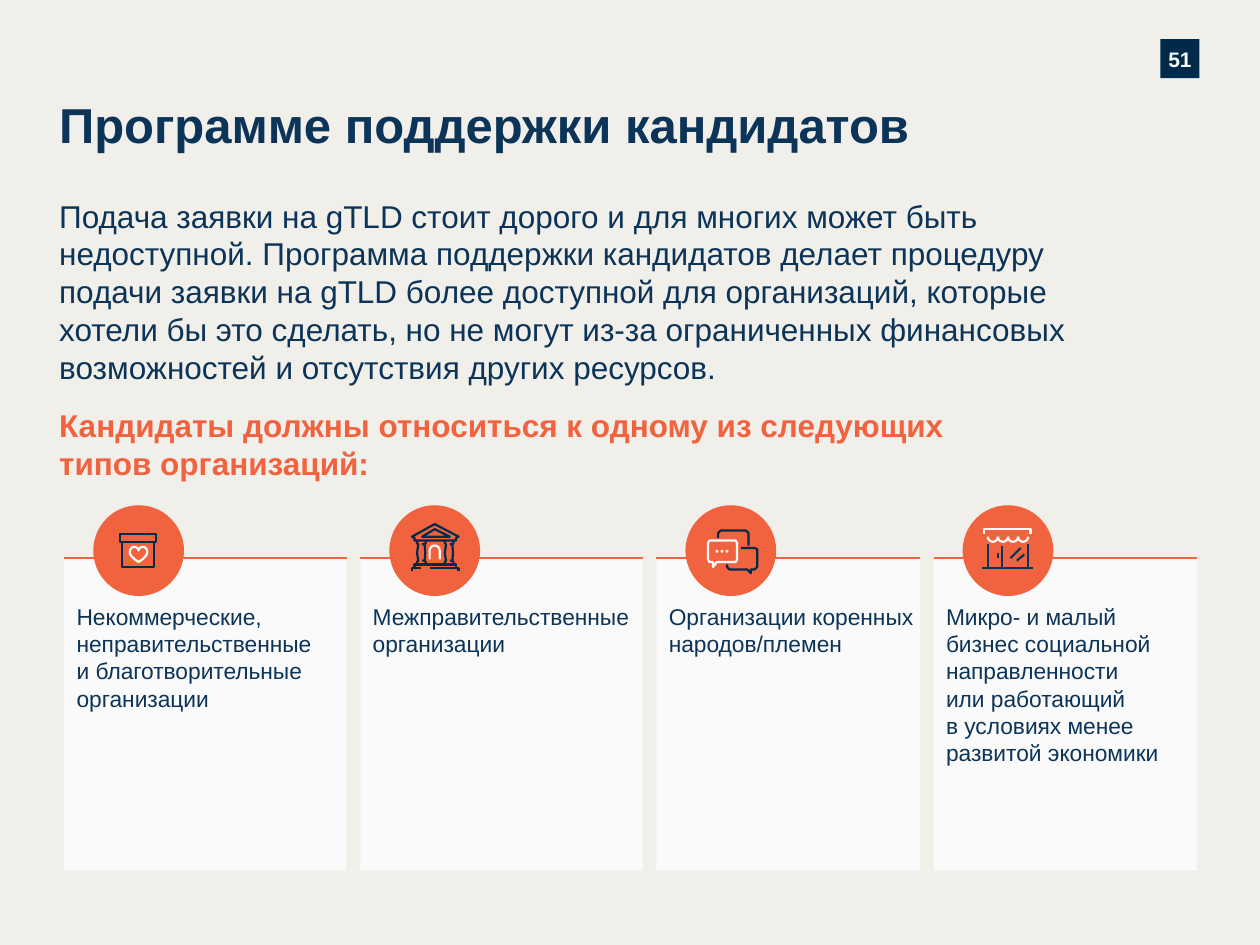
from dataclasses import dataclass
from math import cos, radians, sin

from lxml import etree
from pptx import Presentation
from pptx.dml.color import RGBColor
from pptx.enum.shapes import MSO_CONNECTOR, MSO_SHAPE
from pptx.enum.text import MSO_ANCHOR, PP_ALIGN
from pptx.oxml.ns import qn
from pptx.util import Inches, Pt

NAVY, DEEP_NAVY, ORANGE, PAPER = "0B3458", "002B49", "F1633E", "FAFAFA"
CARD_TOP, CARD_HEIGHT = 4.43, 2.48
BADGE_TOP, BADGE_SIZE, BADGE_INDENT = 4.01, 0.72, 0.23

Point = tuple[float, float]


@dataclass
class Stroke:
    """One icon outline, in hundredths of an inch from the badge corner."""
    points: list[Point]
    color: str = DEEP_NAVY
    closed: bool = False


@dataclass
class Card:
    left: float
    width: float
    paragraphs: list[str]
    icon: list[Stroke]


def rgb(color: str) -> RGBColor:
    return RGBColor.from_string(color)


def arc(cx: float, cy: float, radius: float, start: int, end: int) -> list[Point]:
    """Sample an arc; angles run clockwise from the right."""
    angles = [radians(start + (end - start) * i / 12) for i in range(13)]
    return [(cx + radius * cos(a), cy + radius * sin(a)) for a in angles]


def curve(*controls: Point) -> list[Point]:
    """Sample a cubic Bezier curve."""
    samples = []
    for i in range(9):
        t = i / 8
        weights = ((1 - t) ** 3, 3 * t * (1 - t) ** 2, 3 * t**2 * (1 - t), t**3)
        samples.append(tuple(sum(w * p[axis] for w, p in zip(weights, controls))
                             for axis in (0, 1)))
    return samples


def donation_box() -> list[Stroke]:
    right_half = (curve((36, 45), (36, 45), (43, 41), (43, 37))
                  + curve((43, 37), (43, 35), (41, 33), (40, 33))
                  + curve((40, 33), (37, 33), (36, 35), (36, 36)))
    left_half = [(72 - x, y) for x, y in reversed(right_half)]
    return [
        Stroke([(21, 23), (50, 23), (50, 29), (21, 29)], closed=True),
        Stroke([(23, 29), (48, 29), (48, 49), (23, 49)], closed=True),
        Stroke(right_half + left_half, "FFFFFF", True),
    ]


def government_building() -> list[Stroke]:
    column = [
        [(22, 47), (22, 45), (23, 44), (22, 38), (23, 31), (22, 30), (22, 28)],
        [(28, 31), (28.5, 38), (28, 44)],
        [(26, 31), (28, 31), (29, 30), (29, 28)],
        [(26, 44), (28, 44), (29, 45), (29, 47)],
    ]
    columns = [Stroke([(x + shift, y) for x, y in part])
               for shift in (0, 22) for part in column]
    return columns + [
        Stroke([(32, 50), (55, 50), (55, 52)]),
        Stroke([(18, 52), (18, 50), (25, 50)]),
        Stroke([(20, 50), (20, 47), (53, 47), (53, 50)]),
        Stroke([(32, 43), *arc(36, 36, 4, 180, 360), (40, 43)], PAPER),
        Stroke([(36, 19), (26, 25), (48, 25)], closed=True),
        Stroke([(53, 28), (20, 28), (20, 26), (18, 25), (36, 15), (55, 25), (53, 26)],
               closed=True),
    ]


def speech_bubbles() -> list[Stroke]:
    return [
        Stroke([(40, 28), (19, 28), (18, 30), (18, 43), (19, 45), (22, 45), (22, 49),
                (25, 45), (40, 45), (41, 43), (41, 30)], PAPER, True),
        Stroke([(33, 47), (33, 49), (35, 51), (49, 51), (52, 54), (52, 51), (55, 51),
                (57, 49), (57, 35), (55, 34), (44, 34)]),
        Stroke([(26, 26), (26, 22), (28, 20), (48, 20), (50, 22), (50, 32)]),
    ] + [Stroke(arc(x, 36.5, 0.3, 0, 360), PAPER, True) for x in (25, 29, 33)]


def shop() -> list[Stroke]:
    bars = [((20, 31), (20, 50)), ((31, 32), (31, 50)), ((52, 31), (52, 50)),
            ((28, 38), (28, 42)), ((15, 50), (56, 50)),
            ((46, 34), (38, 42)), ((49, 39), (43, 44))]
    scallops = [Stroke(arc(24 + 8 * i, 25, 4, 180, 0), PAPER) for i in range(4)]
    awning = Stroke([(17, 23), (17, 19), (54, 19), (54, 23)], PAPER)
    return [Stroke(list(bar), NAVY) for bar in bars] + scallops + [awning]


CARDS = [
    Card(0.51, 2.24, ["Некоммерческие,",
                      "неправительственные \nи благотворительные организации"], donation_box()),
    Card(2.86, 2.24, ["Межправительственные организации"], government_building()),
    Card(5.21, 2.09, ["Организации коренных народов/племен"], speech_bubbles()),
    Card(7.41, 2.09, ["Микро- и малый \nбизнес социальной направленности \nили работающий "
                      "\nв условиях менее развитой экономики"], shop()),
]


def write(shape, paragraphs: list[str], size: float, color: str = NAVY, bold: bool = False,
          insets: tuple = (0, 0, 0, 0), align=PP_ALIGN.LEFT, anchor=MSO_ANCHOR.TOP):
    frame = shape.text_frame
    frame.word_wrap = True
    frame.vertical_anchor = anchor
    (frame.margin_left, frame.margin_top,
     frame.margin_right, frame.margin_bottom) = map(Inches, insets)
    for i, text in enumerate(paragraphs):
        paragraph = frame.paragraphs[0] if i == 0 else frame.add_paragraph()
        paragraph.text = text
        paragraph.alignment = align
        font = paragraph.font
        font.name, font.size, font.bold = "Arial", Pt(size), bold
        font.color.rgb = rgb(color)


def add_text(slide, left: float, top: float, width: float, height: float,
             text: str, size: float, **style):
    box = slide.shapes.add_textbox(*map(Inches, (left, top, width, height)))
    write(box, [text], size, **style)


def add_block(slide, kind, left: float, top: float, width: float, height: float, fill: str):
    block = slide.shapes.add_shape(kind, *map(Inches, (left, top, width, height)))
    block.shadow.inherit = False
    block.fill.solid()
    block.fill.fore_color.rgb = rgb(fill)
    block.line.fill.background()
    return block


def add_line(slide, start: Point, end: Point, color: str):
    line = slide.shapes.add_connector(MSO_CONNECTOR.STRAIGHT, *map(Inches, start + end))
    line.line.color.rgb = rgb(color)
    line.line.width = Pt(1.25)
    etree.SubElement(line._element.spPr, qn("a:effectLst"))


def add_stroke(slide, stroke: Stroke, left: float, top: float):
    points = [(left + x / 100, top + y / 100) for x, y in stroke.points]
    if len(points) == 2:
        add_line(slide, *points, stroke.color)
        return
    first, *rest = [(Inches(x), Inches(y)) for x, y in points]
    builder = slide.shapes.build_freeform(*first)
    builder.add_line_segments(rest, close=stroke.closed)
    outline = builder.convert_to_shape()
    outline.shadow.inherit = False
    outline.fill.background()
    outline.line.color.rgb = rgb(stroke.color)
    outline.line.width = Pt(1.25)


def add_card(slide, card: Card):
    panel = add_block(slide, MSO_SHAPE.RECTANGLE, card.left, CARD_TOP,
                      card.width, CARD_HEIGHT, PAPER)
    write(panel, card.paragraphs, 13, insets=(0.1, 0.35, 0, 0.2))
    add_line(slide, (card.left, CARD_TOP), (card.left + card.width, CARD_TOP), ORANGE)
    badge_left = card.left + BADGE_INDENT
    add_block(slide, MSO_SHAPE.OVAL, badge_left, BADGE_TOP, BADGE_SIZE, BADGE_SIZE, ORANGE)
    for stroke in card.icon:
        add_stroke(slide, stroke, badge_left, BADGE_TOP)


def main():
    deck = Presentation()
    deck.slide_width, deck.slide_height = Inches(10), Inches(7.5)
    slide = deck.slides.add_slide(deck.slide_layouts[6])
    slide.background.fill.solid()
    slide.background.fill.fore_color.rgb = rgb("F1EFEA")

    page_number = add_block(slide, MSO_SHAPE.RECTANGLE, 9.21, 0.31, 0.31, 0.31, "002A49")
    write(page_number, ["51"], 12, PAPER, True, align=PP_ALIGN.CENTER, anchor=MSO_ANCHOR.MIDDLE)
    page_number.text_frame.paragraphs[0].line_spacing = 1.08

    add_text(slide, 0.47, 0.75, 7.53, 0.55, "Программе поддержки кандидатов", 28, bold=True)
    add_text(slide, 0.47, 1.56, 8.24, 1.49,
             "Подача заявки на gTLD стоит дорого и для многих может быть недоступной. "
             "Программа поддержки кандидатов делает процедуру подачи заявки на gTLD более "
             "доступной для организаций, которые хотели бы это сделать, но не могут из-за "
             "ограниченных финансовых возможностей и отсутствия других ресурсов.", 18)
    add_text(slide, 0.47, 3.22, 7.73, 0.59,
             "Кандидаты должны относиться к одному из следующих типов организаций:",
             18, color=ORANGE, bold=True)
    for card in CARDS:
        add_card(slide, card)
    deck.save("out.pptx")


if __name__ == "__main__":
    main()
